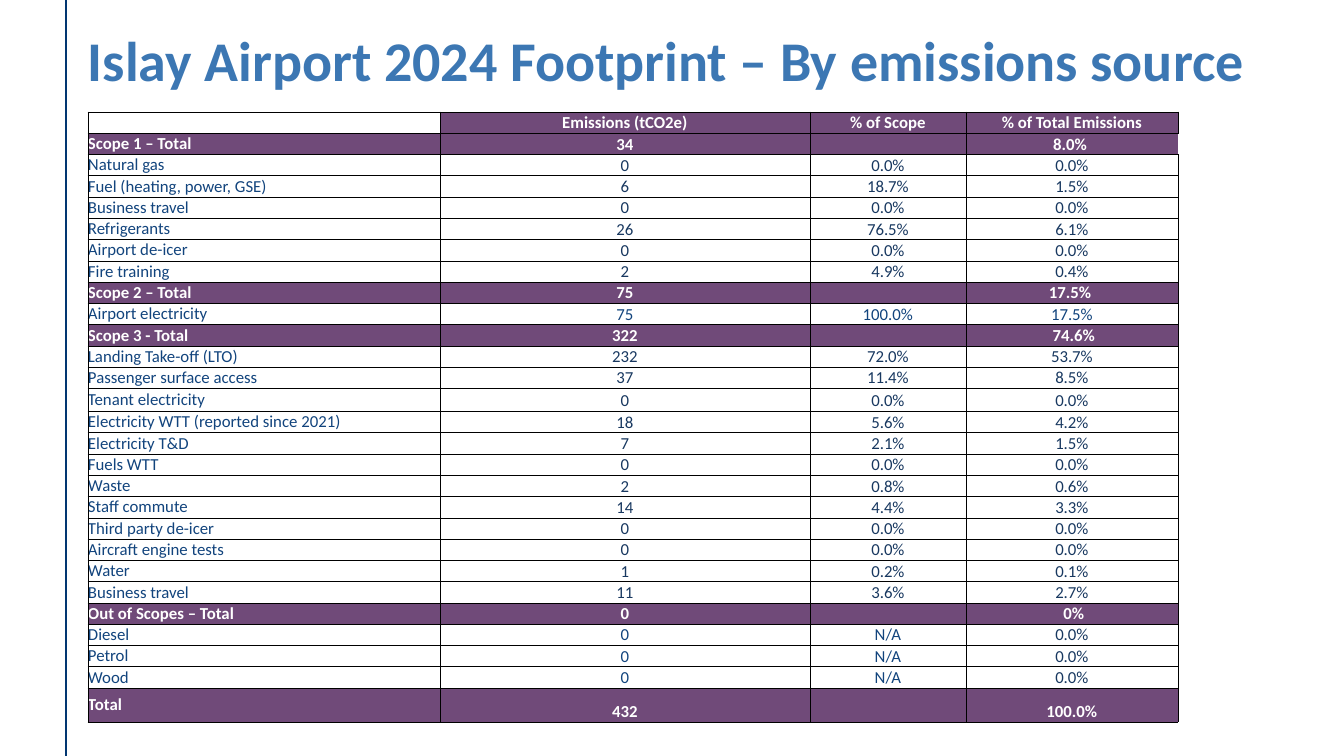
from dataclasses import dataclass

from lxml.etree import SubElement
from pptx import Presentation
from pptx.dml.color import RGBColor
from pptx.enum.shapes import MSO_CONNECTOR as Connector
from pptx.enum.text import MSO_ANCHOR as Anchor, MSO_AUTO_SIZE as AutoSize, PP_ALIGN as Align
from pptx.oxml.ns import qn
from pptx.util import Emu, Pt

TITLE = "Islay Airport 2024 Footprint – By emissions source"
HEADER = ("", "Emissions (tCO2e)", "% of Scope", "% of Total Emissions")
# Each section: total row, columns whose values use the label colour, source rows
SECTIONS = [
    (("Scope 1 – Total", "34", "", "8.0% "), (), [
        ("Natural gas", "0", "0.0%", "0.0%"),
        ("Fuel (heating, power, GSE)", "6", "18.7%", "1.5%"),
        ("Business travel", "0", "0.0%", "0.0%"),
        ("Refrigerants", "26", "76.5%", "6.1%"),
        ("Airport de-icer", "0", "0.0%", "0.0%"),
        ("Fire training", "2", "4.9%", "0.4%"),
    ]),
    (("Scope 2 – Total", "75", "", "17.5% "), (1, 2, 3), [
        ("Airport electricity", "75", "100.0%", "17.5%"),
    ]),
    (("Scope 3 - Total", "322", "", " 74.6%"), (), [
        ("Landing Take-off (LTO)", "232", "72.0%", "53.7%"),
        ("Passenger surface access", "37", "11.4%", "8.5%"),
        ("Tenant electricity", "0", "0.0%", "0.0%"),
        ("Electricity WTT (reported since 2021)", "18", "5.6%", "4.2%"),
        ("Electricity T&D", "7", "2.1%", "1.5%"),
        ("Fuels WTT", "0", "0.0%", "0.0%"),
        ("Waste", "2", "0.8%", "0.6%"),
        ("Staff commute", "14", "4.4%", "3.3%"),
        ("Third party de-icer", "0", "0.0%", "0.0%"),
        ("Aircraft engine tests", "0", "0.0%", "0.0%"),
        ("Water", "1", "0.2%", "0.1%"),
        ("Business travel", "11", "3.6%", "2.7%"),
    ]),
    (("Out of Scopes – Total", "0", "", " 0%"), (1, 2), [
        ("Diesel", "0", "N/A", "0.0%"),
        ("Petrol", "0", "N/A", "0.0%"),
        ("Wood", "0", "N/A", "0.0%"),
    ]),
    (("Total", "432", "", "100.0%"), (), []),
]

SLIDE_SIZE = (1344, 756)
RULE_X = 66
TITLE_BOX = (88, 33, 1168, 107)
TABLE_LEFT, TABLE_TOP, TABLE_HEIGHT = 88, 112, 611
COLUMN_WIDTHS = (352, 370, 156, 212)
SPECIAL_HEIGHTS = {"Tenant electricity": 23, "Total": 34}


@dataclass(frozen=True)
class Theme:
    font: str = "Calibri"
    title_size: int = 40
    table_size: int = 12
    title: str = "3C77B3"
    rule: str = "023671"
    band: str = "704A79"
    on_band: str = "FFFFFF"
    label: str = "12447D"
    value: str = "183860"
    border: str = "000000"


THEME = Theme()


def px(length):
    return Emu(round(length * 914400 / 100.8))


def add_span(para, text, size, color, bold):
    span = para.add_run()
    span.text = text
    span.font.name = THEME.font
    span.font.size = Pt(size)
    span.font.bold = bold
    span.font.color.rgb = RGBColor.from_string(color)


def set_borders(cell, hidden=()):
    properties = cell._tc.get_or_add_tcPr()
    for side in ("lnL", "lnR", "lnT", "lnB"):
        line = SubElement(properties, qn(f"a:{side}"), w=str(Pt(0.5)))
        if side in hidden:
            SubElement(line, qn("a:noFill"))
        else:
            fill = SubElement(line, qn("a:solidFill"))
            SubElement(fill, qn("a:srgbClr"), val=THEME.border)


def fill_cell(cell, text, color, banded, centered, anchor, hidden=()):
    set_borders(cell, hidden)
    if banded:
        cell.fill.solid()
        cell.fill.fore_color.rgb = RGBColor.from_string(THEME.band)
    else:
        cell.fill.background()
    cell.margin_left = cell.margin_right = cell.margin_top = cell.margin_bottom = 0
    cell.vertical_anchor = anchor
    para = cell.text_frame.paragraphs[0]
    para.alignment = Align.CENTER if centered else Align.LEFT
    if text:
        add_span(para, text, THEME.table_size, color, banded)
    else:  # keeps an empty cell from stretching its row
        SubElement(para._p, qn("a:endParaRPr"), sz=str(THEME.table_size * 100))


def add_title(page):
    title = page.shapes.title
    title.left, title.top, title.width, title.height = map(px, TITLE_BOX)
    frame = title.text_frame
    frame.margin_left = frame.margin_right = frame.margin_top = frame.margin_bottom = 0
    frame.word_wrap = True
    frame.auto_size = AutoSize.NONE
    frame.vertical_anchor = Anchor.TOP
    para = frame.paragraphs[0]
    para.alignment = Align.LEFT
    para.line_spacing = 0.9
    add_span(para, TITLE, THEME.title_size, THEME.title, True)


def add_rule(page):
    rule = page.shapes.add_connector(
        Connector.STRAIGHT, px(RULE_X), 0, px(RULE_X), px(SLIDE_SIZE[1]))
    rule.line.color.rgb = RGBColor.from_string(THEME.rule)
    rule.line.width = Pt(1)
    SubElement(rule._element.spPr, qn("a:effectLst"))


def add_emissions_table(page):
    rows = [(HEADER, True, ())]
    for total, label_columns, sources in SECTIONS:
        rows.append((total, True, ()))
        rows += [(source, False, label_columns) for source in sources]

    table = page.shapes.add_table(
        len(rows), len(HEADER), px(TABLE_LEFT), px(TABLE_TOP),
        px(sum(COLUMN_WIDTHS)), px(TABLE_HEIGHT)).table
    table.first_row = table.horz_banding = False
    for column, width in zip(table.columns, COLUMN_WIDTHS):
        column.width = px(width)

    regular = ((TABLE_HEIGHT - sum(SPECIAL_HEIGHTS.values()))
               / (len(rows) - len(SPECIAL_HEIGHTS)))
    for r, (texts, is_total, label_columns) in enumerate(rows):
        table.rows[r].height = px(SPECIAL_HEIGHTS.get(texts[0], regular))
        for c, text in enumerate(texts):
            if is_total:
                color = THEME.on_band
            else:
                color = THEME.label if c == 0 or c in label_columns else THEME.value
            anchor = Anchor.MIDDLE if r == 0 or c == 0 else Anchor.BOTTOM
            open_side = ("lnR",) if r == 1 and c == len(HEADER) - 1 else ()
            banded = is_total and (r, c) != (0, 0)
            fill_cell(table.cell(r, c), text, color, banded, c > 0, anchor, open_side)


def main():
    deck = Presentation()
    deck.slide_width, deck.slide_height = map(px, SLIDE_SIZE)
    page = deck.slides.add_slide(deck.slide_layouts[5])
    add_rule(page)
    add_title(page)
    add_emissions_table(page)
    deck.save("out.pptx")


if __name__ == "__main__":
    main()
